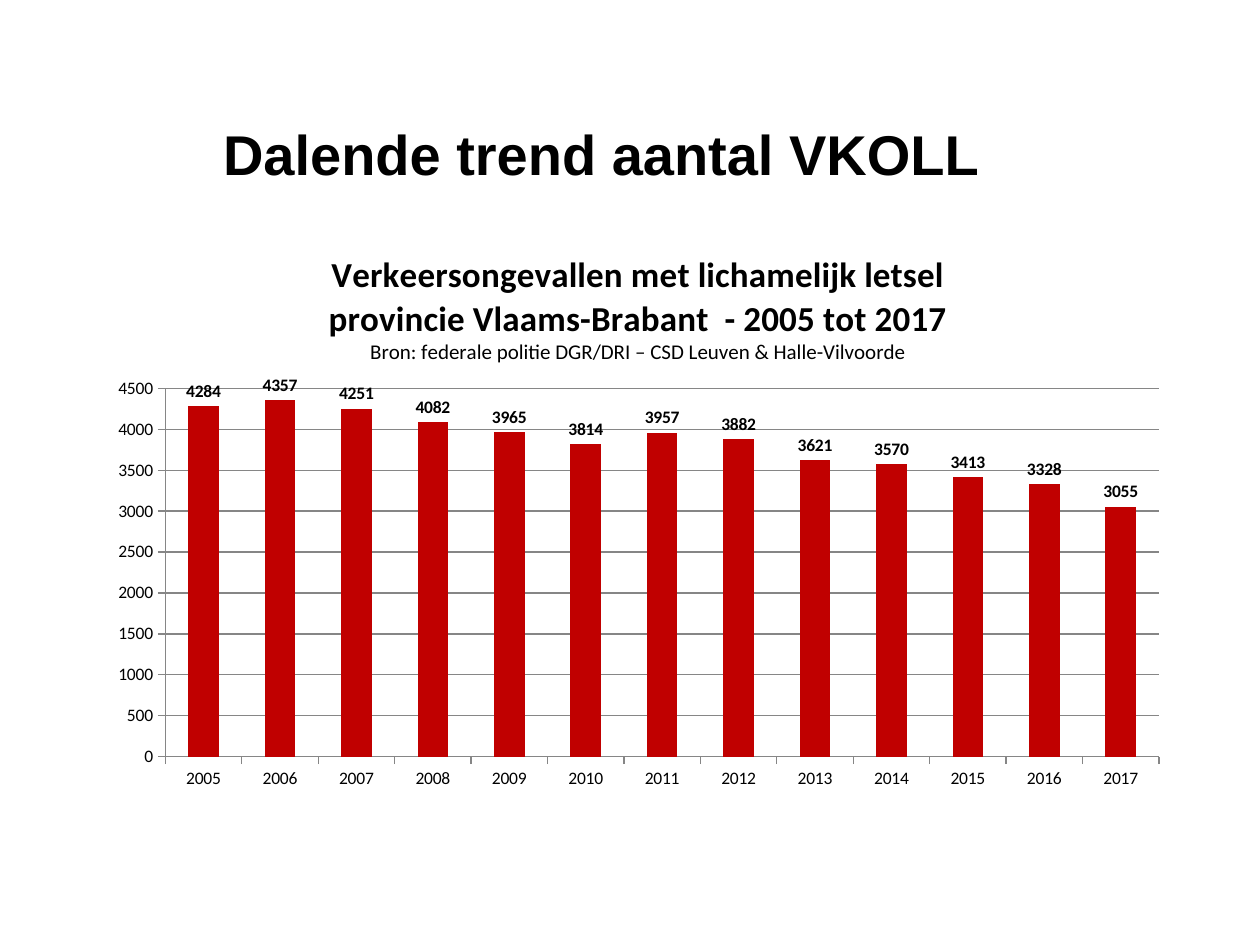
import pptx
import pptx.chart.data
import pptx.dml.color
import pptx.enum.chart
import pptx.enum.text
import pptx.oxml
import pptx.oxml.ns
import pptx.util
from lxml import etree


def color(hex_code):
    return pptx.dml.color.RGBColor.from_string(hex_code)


def set_layout(parent, settings):
    """Place a chart part by shares of the chart's size."""
    tag = pptx.oxml.ns.qn("c:layout")
    layout = parent.find(tag)
    if layout is None:
        layout = etree.Element(tag)
        parent.insert(0, layout)
    manual = etree.SubElement(layout, pptx.oxml.ns.qn("c:manualLayout"))
    for name, value in settings.items():
        etree.SubElement(manual, pptx.oxml.ns.qn("c:" + name)).set("val", str(value))


deck = pptx.Presentation()
deck.slide_width = pptx.util.Inches(10)
deck.slide_height = pptx.util.Inches(7.5)
slide = deck.slides.add_slide(deck.slide_layouts[5])

# Slide title
title = slide.shapes.title
title.left, title.top = pptx.util.Inches(1.77), pptx.util.Inches(0.92)
title.width, title.height = pptx.util.Inches(7.6), pptx.util.Inches(0.64)
frame = title.text_frame
frame.margin_left = frame.margin_top = 0
frame.margin_right, frame.margin_bottom = pptx.util.Inches(0.1), pptx.util.Inches(0.05)
frame.vertical_anchor = pptx.enum.text.MSO_ANCHOR.MIDDLE
frame.auto_size = pptx.enum.text.MSO_AUTO_SIZE.NONE
para = frame.paragraphs[0]
para.alignment = pptx.enum.text.PP_ALIGN.LEFT
span = para.add_run()
span.text = "Dalende trend aantal VKOLL"
span.font.name, span.font.size, span.font.bold = "Arial", pptx.util.Pt(32), True
span.font.color.rgb = color("000000")

# Accidents per year
accidents = [4284, 4357, 4251, 4082, 3965, 3814, 3957, 3882, 3621, 3570, 3413, 3328, 3055]
data = pptx.chart.data.CategoryChartData()
data.categories = [str(2005 + index) for index in range(len(accidents))]
data.add_series("Series 1", accidents)
chart = slide.shapes.add_chart(
    pptx.enum.chart.XL_CHART_TYPE.COLUMN_CLUSTERED,
    pptx.util.Inches(0.77), pptx.util.Inches(1.78),
    pptx.util.Inches(8.61), pptx.util.Inches(4.57), data).chart
chart.has_legend = False
chart.font.name, chart.font.size = "Calibri", pptx.util.Pt(10)
chart.font.color.rgb = color("000000")

# Chart title with source line
title_lines = [
    ("Verkeersongevallen met lichamelijk letsel", 20, True),
    ("provincie Vlaams-Brabant  - 2005 tot 2017", 20, True),
    ("Bron: federale politie DGR/DRI – CSD Leuven & Halle-Vilvoorde", 12, False),
]
chart.has_title = True
frame = chart.chart_title.text_frame
for index, (text, size, bold) in enumerate(title_lines):
    para = frame.add_paragraph() if index else frame.paragraphs[0]
    span = para.add_run()
    span.text = text
    span.font.name, span.font.size, span.font.bold = "Calibri", pptx.util.Pt(size), bold
    span.font.color.rgb = color("000000")

# Columns and their labels
plot = chart.plots[0]
plot.gap_width = 150
plot.vary_by_categories = False
series = plot.series[0]
series.format.fill.solid()
series.format.fill.fore_color.rgb = color("C00000")
labels = series.data_labels
labels.show_value = True
labels.position = pptx.enum.chart.XL_LABEL_POSITION.OUTSIDE_END
labels.font.name, labels.font.size, labels.font.bold = "Calibri", pptx.util.Pt(10), True
labels.font.color.rgb = color("000000")

# Axes and gridlines
values = chart.value_axis
values.minimum_scale, values.maximum_scale, values.major_unit = 0, 4500, 500
values.has_major_gridlines = True
for axis in (chart.category_axis, values):
    axis.major_tick_mark = pptx.enum.chart.XL_TICK_MARK.OUTSIDE
    axis.minor_tick_mark = pptx.enum.chart.XL_TICK_MARK.NONE
for line in (chart.category_axis.format.line, values.format.line,
             values.major_gridlines.format.line):
    line.color.rgb = color("868686")
    line.width = pptx.util.Pt(0.75)

# Positions inside the chart
set_layout(chart.chart_title._element,
           {"xMode": "edge", "yMode": "edge", "x": 0.21, "y": 0.04})
set_layout(chart._chartSpace.chart.plotArea,
           {"layoutTarget": "inner", "xMode": "edge", "yMode": "edge",
            "x": 0.063, "y": 0.285, "w": 0.916, "h": 0.64})

deck.save("out.pptx")
